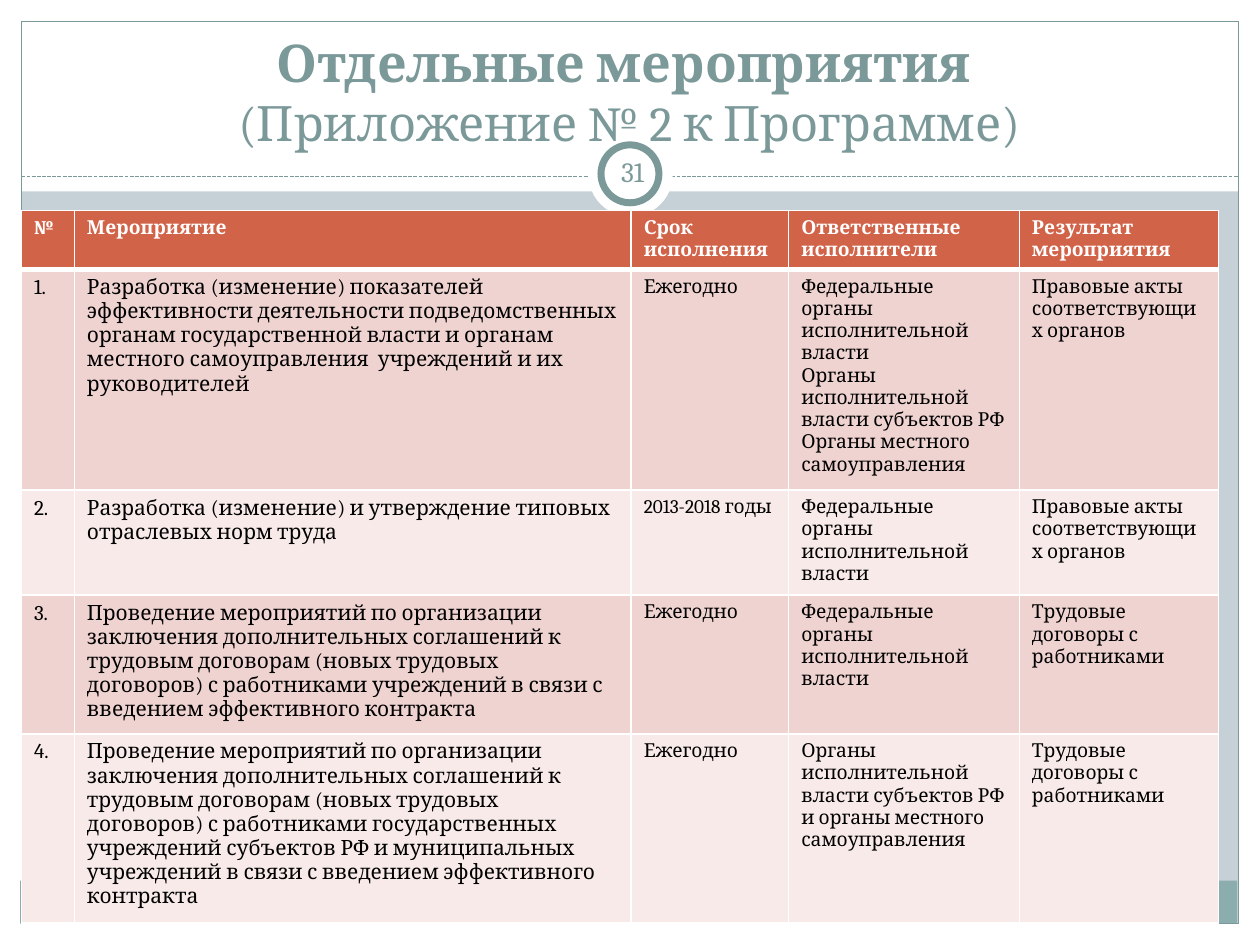
from dataclasses import dataclass
from typing import Optional

from pptx import Presentation
from pptx.dml.color import RGBColor
from pptx.enum.dml import MSO_LINE
from pptx.enum.shapes import MSO_CONNECTOR, MSO_SHAPE
from pptx.enum.text import MSO_ANCHOR, PP_ALIGN
from pptx.oxml.ns import qn
from pptx.util import Inches, Pt
from lxml.etree import SubElement


@dataclass(frozen=True)
class Theme:
    font: str = "Cambria"
    white: str = "FFFFFF"
    black: str = "000000"
    backdrop: str = "C5D1D7"
    accent: str = "7C999A"
    footer: str = "8CADAE"
    header: str = "D16349"
    bands: tuple = ("EED3D0", "F7EAE9")
    title: float = 29.7
    subtitle: float = 27.9
    number: float = 16
    main: float = 12
    detail: float = 11


@dataclass(frozen=True)
class Panel:
    left: float
    top: float
    width: float
    height: float
    fill: Optional[str] = None
    line: Optional[str] = None
    weight: float = 0.75
    kind: MSO_SHAPE = MSO_SHAPE.RECTANGLE


@dataclass(frozen=True)
class Measure:
    task: str
    term: str
    owners: str
    result: str
    height: float


THEME = Theme()
PANELS = [
    Panel(0, 7.33, 10, 0.17, THEME.white),
    Panel(0, 0, 10, 1.52, THEME.white),
    Panel(0, 0, 0.17, 7.5, THEME.white),
    Panel(9.83, 0, 0.17, 7.5, THEME.white),
    Panel(0.16, 6.99, 9.66, 0.34, THEME.footer),
    Panel(0.17, 0.17, 9.66, 7.16, line=THEME.accent),
]
BADGE = [
    Panel(4.67, 1.05, 0.67, 0.67, THEME.white, kind=MSO_SHAPE.OVAL),
    Panel(4.77, 1.15, 0.46, 0.46, THEME.white, THEME.accent, 4, MSO_SHAPE.OVAL),
]

COLUMN_WIDTHS = [0.42, 4.42, 1.25, 1.83, 1.58]
HEADER_HEIGHT = 0.45
HEADINGS = ["№", "Мероприятие", "Срок исполнения", "Ответственные исполнители",
            "Результат мероприятия"]
YEARLY = "Ежегодно"
FEDERAL = "Федеральные органы исполнительной власти"
REGIONAL = "Органы исполнительной власти субъектов РФ"
LEGAL_ACTS = "Правовые акты соответствующих органов"
CONTRACTS = "Трудовые договоры с работниками"
AGREEMENTS = ("Проведение мероприятий по организации заключения дополнительных соглашений "
              "к трудовым договорам (новых трудовых договоров) с работниками ")
IN_CONNECTION = "в связи с введением эффективного контракта"
MEASURES = [
    Measure("Разработка (изменение) показателей эффективности деятельности "
            "подведомственных органам государственной власти и органам местного "
            "самоуправления  учреждений и их руководителей",
            YEARLY, f"{FEDERAL}\n{REGIONAL}\nОрганы местного самоуправления",
            LEGAL_ACTS, 1.7),
    Measure("Разработка (изменение) и утверждение типовых отраслевых норм труда",
            "2013-2018 годы", FEDERAL, LEGAL_ACTS, 0.81),
    Measure(f"{AGREEMENTS}учреждений {IN_CONNECTION}", YEARLY, FEDERAL, CONTRACTS, 1.09),
    Measure(f"{AGREEMENTS}государственных учреждений субъектов РФ и муниципальных "
            f"учреждений {IN_CONNECTION}",
            YEARLY, f"{REGIONAL} и органы местного самоуправления", CONTRACTS, 1.45),
]


def style_font(font, size: float, color: str, bold: bool = False) -> None:
    font.name = THEME.font
    font.size = Pt(size)
    font.bold = bold
    font.color.rgb = RGBColor.from_string(color)


def add_panel(page, panel: Panel) -> None:
    shape = page.shapes.add_shape(panel.kind, Inches(panel.left), Inches(panel.top),
                                  Inches(panel.width), Inches(panel.height))
    shape.shadow.inherit = False
    if panel.fill:
        shape.fill.solid()
        shape.fill.fore_color.rgb = RGBColor.from_string(panel.fill)
    else:
        shape.fill.background()
    if panel.line:
        shape.line.color.rgb = RGBColor.from_string(panel.line)
        shape.line.width = Pt(panel.weight)
    else:
        shape.line.fill.background()


def add_divider(page) -> None:
    divider = page.shapes.add_connector(MSO_CONNECTOR.STRAIGHT, Inches(0.17), Inches(1.4),
                                        Inches(9.83), Inches(1.4))
    divider.line.color.rgb = RGBColor.from_string(THEME.accent)
    divider.line.width = Pt(0.75)
    divider.line.dash_style = MSO_LINE.SQUARE_DOT
    SubElement(divider._element.spPr, qn("a:effectLst"))


def add_centred_box(page, left: float, top: float, width: float, height: float,
                    anchor: MSO_ANCHOR):
    box = page.shapes.add_textbox(Inches(left), Inches(top), Inches(width), Inches(height))
    frame = box.text_frame
    frame.word_wrap = True
    frame.vertical_anchor = anchor
    frame.paragraphs[0].alignment = PP_ALIGN.CENTER
    return frame


def add_title(page) -> None:
    para = add_centred_box(page, 0.33, 0.25, 9.33, 1, MSO_ANCHOR.BOTTOM).paragraphs[0]
    span = para.add_run()
    span.text = "Отдельные мероприятия "
    style_font(span.font, THEME.title, THEME.accent, bold=True)
    para.add_line_break()
    span = para.add_run()
    span.text = "(Приложение № 2 к Программе)"
    style_font(span.font, THEME.subtitle, THEME.accent)


def add_page_number(page) -> None:
    frame = add_centred_box(page, 4.77, 1.12, 0.5, 0.48, MSO_ANCHOR.MIDDLE)
    frame.margin_left = frame.margin_right = Inches(0.05)
    frame.margin_top = frame.margin_bottom = Inches(0.05)
    frame.paragraphs[0].text = "31"
    style_font(frame.paragraphs[0].font, THEME.number, THEME.accent)


def set_borders(cell, bottom: float) -> None:
    properties = cell._tc.get_or_add_tcPr()
    for side, weight in {"L": 1, "R": 1, "T": 1, "B": bottom}.items():
        border = SubElement(properties, qn(f"a:ln{side}"), w=str(Pt(weight)))
        fill = SubElement(border, qn("a:solidFill"))
        SubElement(fill, qn("a:srgbClr"), val=THEME.white)


def fill_cell(cell, text: str, fill: str, size: float, color: str,
              bold: bool = False, bottom: float = 1) -> None:
    set_borders(cell, bottom)
    cell.fill.solid()
    cell.fill.fore_color.rgb = RGBColor.from_string(fill)
    cell.text = text
    for para in cell.text_frame.paragraphs:
        style_font(para.font, size, color, bold)


def add_measures_table(page) -> None:
    heights = [HEADER_HEIGHT] + [measure.height for measure in MEASURES]
    table = page.shapes.add_table(len(heights), len(COLUMN_WIDTHS), Inches(0.17), Inches(1.67),
                                  Inches(sum(COLUMN_WIDTHS)), Inches(sum(heights))).table
    for column, width in zip(table.columns, COLUMN_WIDTHS):
        column.width = Inches(width)
    for row, height in zip(table.rows, heights):
        row.height = Inches(height)
    for column, heading in enumerate(HEADINGS):
        fill_cell(table.cell(0, column), heading, THEME.header, THEME.detail, THEME.white,
                  bold=True, bottom=3)
    for row, measure in enumerate(MEASURES, start=1):
        band = THEME.bands[(row - 1) % 2]
        texts = [f"{row}.", measure.task, measure.term, measure.owners, measure.result]
        for column, text in enumerate(texts):
            size = THEME.main if column < 2 else THEME.detail
            fill_cell(table.cell(row, column), text, band, size, THEME.black,
                      bottom=1)


def main() -> None:
    deck = Presentation()
    deck.slide_width, deck.slide_height = Inches(10), Inches(7.5)
    page = deck.slides.add_slide(deck.slide_layouts[6])
    page.background.fill.solid()
    page.background.fill.fore_color.rgb = RGBColor.from_string(THEME.backdrop)
    for panel in PANELS:
        add_panel(page, panel)
    add_divider(page)
    for panel in BADGE:
        add_panel(page, panel)
    add_title(page)
    add_page_number(page)
    add_measures_table(page)
    deck.save("out.pptx")


if __name__ == "__main__":
    main()
